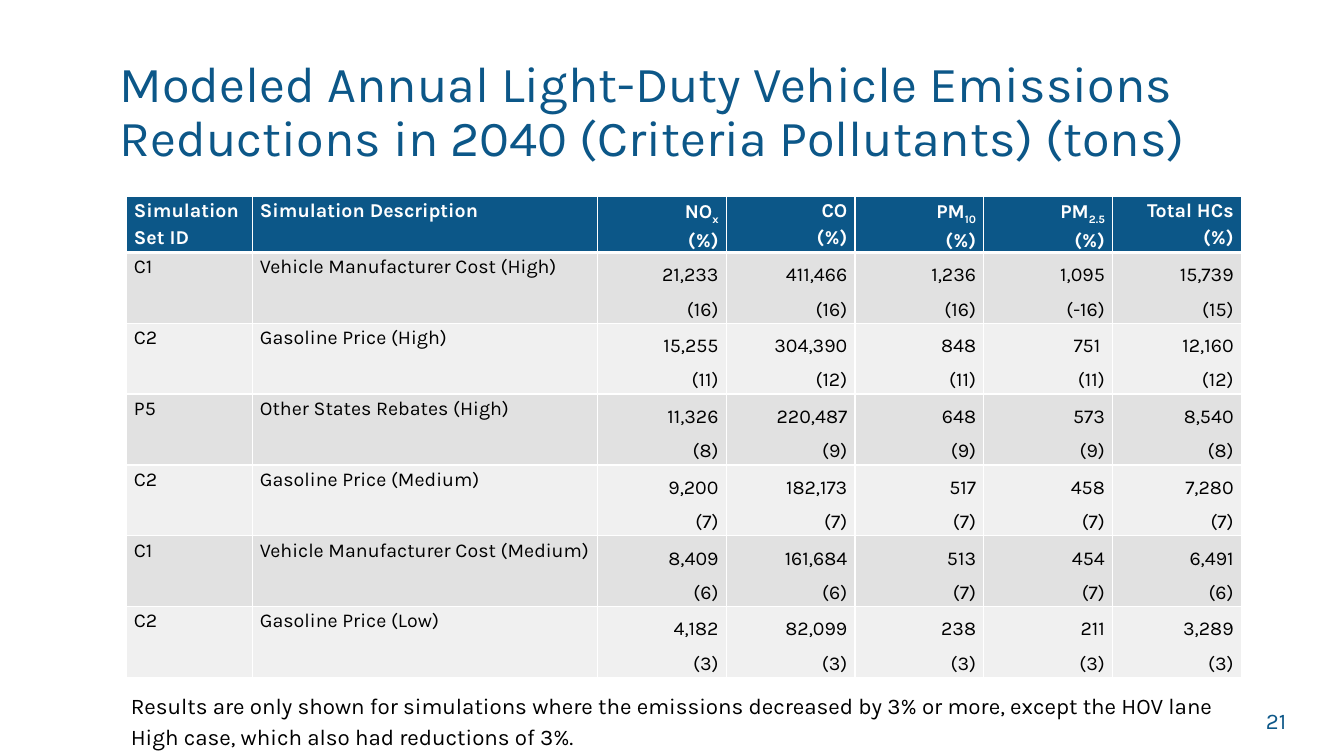
"""Build the slide on modeled vehicle emissions reductions in 2040."""
from copy import deepcopy

from lxml.etree import SubElement
from pptx import Presentation
from pptx.dml.color import RGBColor
from pptx.enum.text import MSO_ANCHOR as Anchor, MSO_AUTO_SIZE as AutoSize, PP_ALIGN as Align
from pptx.oxml.ns import qn
from pptx.util import Pt

TITLE = ("Modeled Annual Light-Duty Vehicle Emissions "
         "Reductions in 2040 (Criteria Pollutants) (tons)")
NOTE = ("Results are only shown for simulations where the emissions decreased by 3% "
        "or more, except the HOV lane High case, which also had reductions of 3%.")
PAGE_NUMBER = "21"
LABEL_HEADERS = ["Simulation Set ID", "Simulation Description"]
POLLUTANTS = [("NO", "x"), ("CO", ""), ("PM", "10"), ("PM", "2.5"), ("Total HCs", "")]
UNIT = "(%)"
SIMULATIONS = [
    ("C1", "Vehicle Manufacturer Cost (High)",
     [("21,233", "(16)"), ("411,466", "(16)"), ("1,236", "(16)"), ("1,095", "(-16)"), ("15,739", "(15)")]),
    ("C2", "Gasoline Price (High)",
     [("15,255", "(11)"), ("304,390", "(12)"), ("848", "(11)"), ("751 ", "(11)"), ("12,160", "(12)")]),
    ("P5", "Other States Rebates (High)",
     [("11,326", "(8)"), ("220,487", "(9)"), ("648", "(9)"), ("573", "(9)"), ("8,540", "(8)")]),
    ("C2", "Gasoline Price (Medium)",
     [("9,200", "(7)"), ("182,173", "(7)"), ("517", "(7)"), ("458", "(7)"), ("7,280", "(7)")]),
    ("C1", "Vehicle Manufacturer Cost (Medium)",
     [("8,409", "(6)"), ("161,684", "(6)"), ("513", "(7)"), ("454", "(7)"), ("6,491", "(6)")]),
    ("C2", "Gasoline Price (Low)",
     [("4,182", "(3)"), ("82,099", "(3)"), ("238", "(3)"), ("211", "(3)"), ("3,289", "(3)")]),
]

FONT = "Karla"
BLUE = RGBColor(0x0C, 0x57, 0x88)
WHITE = RGBColor(0xFF, 0xFF, 0xFF)
BLACK = RGBColor(0, 0, 0)
BANDS = [RGBColor(0xE1, 0xE1, 0xE1), RGBColor(0xF0, 0xF0, 0xF0)]

COLUMN_WIDTHS = [90, 246.4] + [92] * len(POLLUTANTS)
ROW_HEIGHTS = [39.8] + [50.6] * len(SIMULATIONS)


def add_run(paragraph, text, size, color, bold=False):
    run = paragraph.add_run()
    run.text = text
    run.font.name = FONT
    run.font.size = Pt(size)
    run.font.color.rgb = color
    run.font.bold = bold
    return run


def add_break(paragraph, run):
    paragraph.add_line_break()
    paragraph._p[-1].append(deepcopy(run.font._element))


def set_spacing(paragraph, line, before=0, after=0, align=Align.LEFT):
    paragraph.line_spacing = line
    paragraph.space_before = Pt(before)
    paragraph.space_after = Pt(after)
    paragraph.alignment = align


def add_text(slide, box, text, size, color, line=1.0, before=0,
             align=Align.LEFT, anchor=Anchor.MIDDLE):
    shape = slide.shapes.add_textbox(*map(Pt, box))
    frame = shape.text_frame
    frame.word_wrap = True
    frame.auto_size = AutoSize.NONE
    frame.vertical_anchor = anchor
    set_spacing(frame.paragraphs[0], line, before, align=align)
    add_run(frame.paragraphs[0], text, size, color)


def format_cell(cell, fill, top=1, bottom=1):
    cell.margin_left = cell.margin_right = Pt(5.4)
    cell.margin_top = cell.margin_bottom = 0
    properties = cell._tc.get_or_add_tcPr()
    for side, width in (("L", 1), ("R", 1), ("T", top), ("B", bottom)):
        border = SubElement(properties, qn(f"a:ln{side}"), w=str(Pt(width)))
        SubElement(SubElement(border, qn("a:solidFill")), qn("a:srgbClr"), val=str(WHITE))
    cell.fill.solid()
    cell.fill.fore_color.rgb = fill


def fill_header(table):
    headers = [(label, "", "") for label in LABEL_HEADERS]
    headers += [(name, subscript, UNIT) for name, subscript in POLLUTANTS]
    for column, (name, subscript, unit) in enumerate(headers):
        cell = table.cell(0, column)
        format_cell(cell, BLUE, bottom=3)
        paragraph = cell.text_frame.paragraphs[0]
        set_spacing(paragraph, 1.15, 6, 6, Align.RIGHT if unit else Align.LEFT)
        run = add_run(paragraph, name, 14, WHITE, True)
        if subscript:
            run = add_run(paragraph, subscript, 14, WHITE, True)
            run.font._element.set("baseline", "-25000")
        if unit:
            add_break(paragraph, run)
            add_run(paragraph, unit, 14, WHITE, True)


def fill_simulations(table):
    for row, (set_id, description, results) in enumerate(SIMULATIONS, 1):
        for column, lines in enumerate([(set_id,), (description,), *results]):
            cell = table.cell(row, column)
            format_cell(cell, BANDS[(row - 1) % 2], top=3 if row == 1 else 1)
            frame = cell.text_frame
            for index, line in enumerate(lines):
                paragraph = frame.add_paragraph() if index else frame.paragraphs[0]
                if column < len(LABEL_HEADERS):
                    set_spacing(paragraph, 1.15, after=10)
                else:
                    set_spacing(paragraph, 1.5, align=Align.RIGHT)
                add_run(paragraph, line, 14, BLACK)


def main():
    presentation = Presentation()
    presentation.slide_width, presentation.slide_height = Pt(960), Pt(540)
    slide = presentation.slides.add_slide(presentation.slide_layouts[6])
    add_text(slide, (78.5, 28.8, 807.8, 104.4), TITLE, 36, BLUE, line=0.9)
    add_text(slide, (678.2, 500.4, 247.7, 28.8), PAGE_NUMBER, 16, BLUE, align=Align.RIGHT)
    add_text(slide, (86.4, 488.2, 796.3, 51.8), NOTE, 16, BLACK,
             line=1.15, before=6, anchor=Anchor.TOP)
    table = slide.shapes.add_table(
        len(ROW_HEIGHTS), len(COLUMN_WIDTHS), Pt(90.3), Pt(140.4),
        Pt(sum(COLUMN_WIDTHS)), Pt(sum(ROW_HEIGHTS))).table
    for column, width in zip(table.columns, COLUMN_WIDTHS):
        column.width = Pt(width)
    for row, height in zip(table.rows, ROW_HEIGHTS):
        row.height = Pt(height)
    fill_header(table)
    fill_simulations(table)
    presentation.save("out.pptx")


if __name__ == "__main__":
    main()
